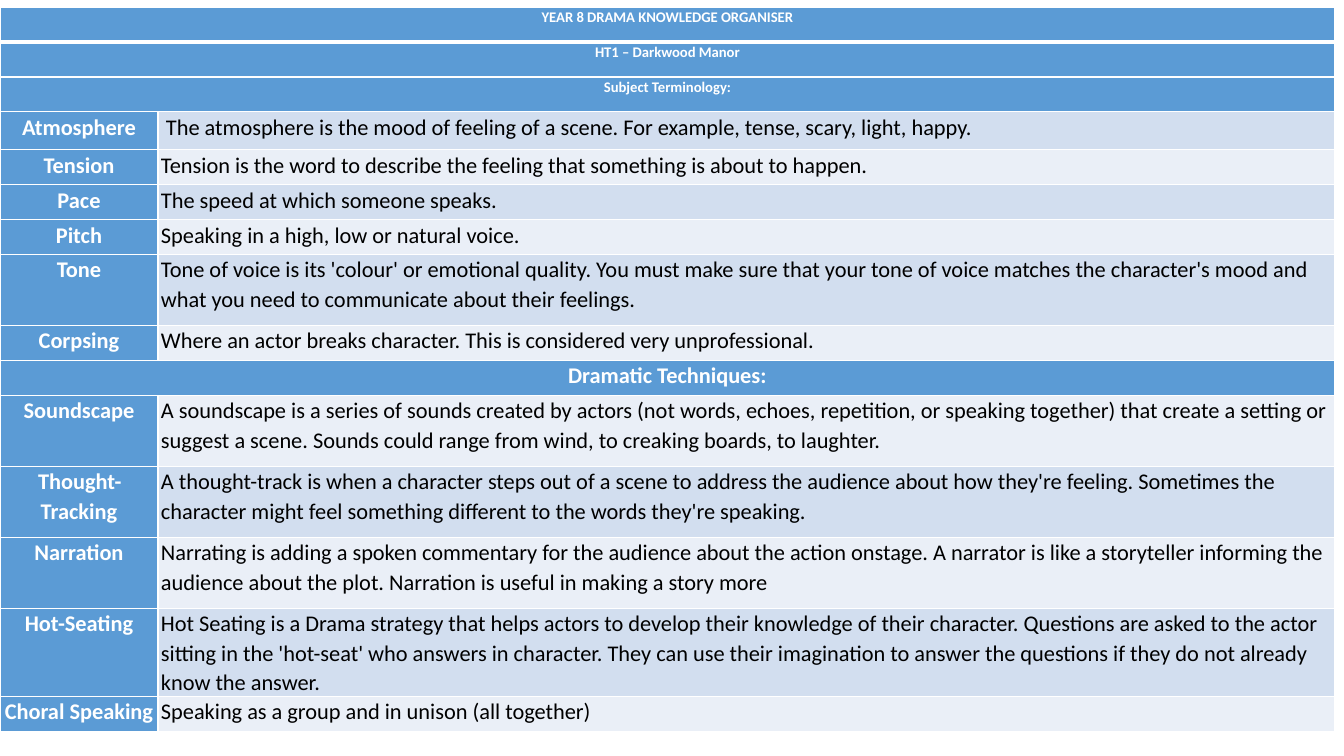
import pptx
import pptx.dml.color
import pptx.enum.text
import pptx.oxml
import pptx.oxml.ns
import pptx.util

EMU_PER_PX = 914400 / 100.8
WHITE = pptx.dml.color.RGBColor(0xFF, 0xFF, 0xFF)
BLACK = pptx.dml.color.RGBColor(0x00, 0x00, 0x00)
BLUE = pptx.dml.color.RGBColor(0x5B, 0x9B, 0xD5)
BANDS = (
    pptx.dml.color.RGBColor(0xEA, 0xEF, 0xF7),
    pptx.dml.color.RGBColor(0xD2, 0xDE, 0xEF),
)
FONT = "Calibri"
TITLE_SIZE, BODY_SIZE = 10.5, 16
COLUMN_WIDTHS = (158, 1177)

# Row height, then a heading alone, or a term with its definition
ROWS = (
    (35, "YEAR 8 DRAMA KNOWLEDGE ORGANISER"),
    (35, "HT1 – Darkwood Manor"),
    (35, "Subject Terminology:"),
    (38, "Atmosphere", " The atmosphere is the mood of feeling of a scene. "
     "For example, tense, scary, light, happy."),
    (35, "Tension", "Tension is the word to describe the feeling that "
     "something is about to happen."),
    (35, "Pace", "The speed at which someone speaks."),
    (35, "Pitch", "Speaking in a high, low or natural voice."),
    (71, "Tone", "Tone of voice is its 'colour' or emotional quality. You must "
     "make sure that your tone of voice matches the character's mood and what "
     "you need to communicate about their feelings."),
    (35, "Corpsing", "Where an actor breaks character. This is considered very "
     "unprofessional."),
    (35, "Dramatic Techniques:"),
    (71, "Soundscape", "A soundscape is a series of sounds created by actors "
     "(not words, echoes, repetition, or speaking together) that create a "
     "setting or suggest a scene. Sounds could range from wind, to creaking "
     "boards, to laughter."),
    (71, "Thought-Tracking", "A thought-track is when a character steps out of "
     "a scene to address the audience about how they're feeling. Sometimes the "
     "character might feel something different to the words they're speaking."),
    (71, "Narration", "Narrating is adding a spoken commentary for the audience "
     "about the action onstage. A narrator is like a storyteller informing the "
     "audience about the plot. Narration is useful in making a story more"),
    (77, "Hot-Seating", "Hot Seating is a Drama strategy that helps actors to "
     "develop their knowledge of their character. Questions are asked to the "
     "actor sitting in the 'hot-seat' who answers in character. They can use "
     "their imagination to answer the questions if they do not already know "
     "the answer."),
    (35, "Choral Speaking", "Speaking as a group and in unison (all together)"),
)


def px(length):
    return pptx.util.Emu(round(length * EMU_PER_PX))


def write_text(frame, text, size=BODY_SIZE, color=BLACK, bold=False, align="LEFT"):
    para = frame.paragraphs[0]
    para.alignment = getattr(pptx.enum.text.PP_ALIGN, align)
    para.line_spacing = 1.07
    span = para.add_run()
    span.text = text
    span.font.name = FONT
    span.font.size = pptx.util.Pt(size)
    span.font.bold = bold
    span.font.color.rgb = color


def set_borders(cell, bottom_width):
    """Rule all four sides in white, 1 pt but for the bottom."""
    properties = cell._tc.get_or_add_tcPr()
    widths = {"lnL": 1, "lnR": 1, "lnT": 1, "lnB": bottom_width}
    for position, (side, width) in enumerate(widths.items()):
        line = pptx.oxml.parse_xml(
            f'<a:{side} {pptx.oxml.ns.nsdecls("a")} w="{pptx.util.Pt(width)}">'
            f'<a:solidFill><a:srgbClr val="{WHITE}"/></a:solidFill></a:{side}>'
        )
        properties.insert(position, line)


class Organiser:
    def __init__(self, slide):
        self.slide = slide

    def add_cell(self, cell, text, fill, bottom_width=1, **text_format):
        cell.margin_left = cell.margin_right = px(3)
        cell.margin_top = cell.margin_bottom = 0
        cell.fill.solid()
        cell.fill.fore_color.rgb = fill
        set_borders(cell, bottom_width)
        if text:
            write_text(cell.text_frame, text, **text_format)

    def add_glossary(self, left, top, rows):
        height = sum(row[0] for row in rows)
        frame = self.slide.shapes.add_table(
            len(rows), len(COLUMN_WIDTHS),
            px(left), px(top), px(sum(COLUMN_WIDTHS)), px(height),
        )
        table = frame.table
        for column, width in zip(table.columns, COLUMN_WIDTHS):
            column.width = px(width)
        for index, (height, label, *definition) in enumerate(rows):
            table.rows[index].height = px(height)
            label_cell, text_cell = table.cell(index, 0), table.cell(index, 1)
            bottom_width = 3 if index == 0 else 1
            self.add_cell(
                label_cell, label, BLUE, bottom_width, color=WHITE, bold=True,
                align="CENTER", size=TITLE_SIZE if index < 3 else BODY_SIZE,
            )
            if definition:
                self.add_cell(text_cell, definition[0], BANDS[index % 2])
            else:
                self.add_cell(text_cell, "", BLUE, bottom_width)
                label_cell.merge(text_cell)


def main():
    deck = pptx.Presentation()
    deck.slide_width, deck.slide_height = px(1344), px(756)
    page = Organiser(deck.slides.add_slide(deck.slide_layouts[6]))
    page.add_glossary(0, 7, ROWS)
    deck.save("out.pptx")


if __name__ == "__main__":
    main()
